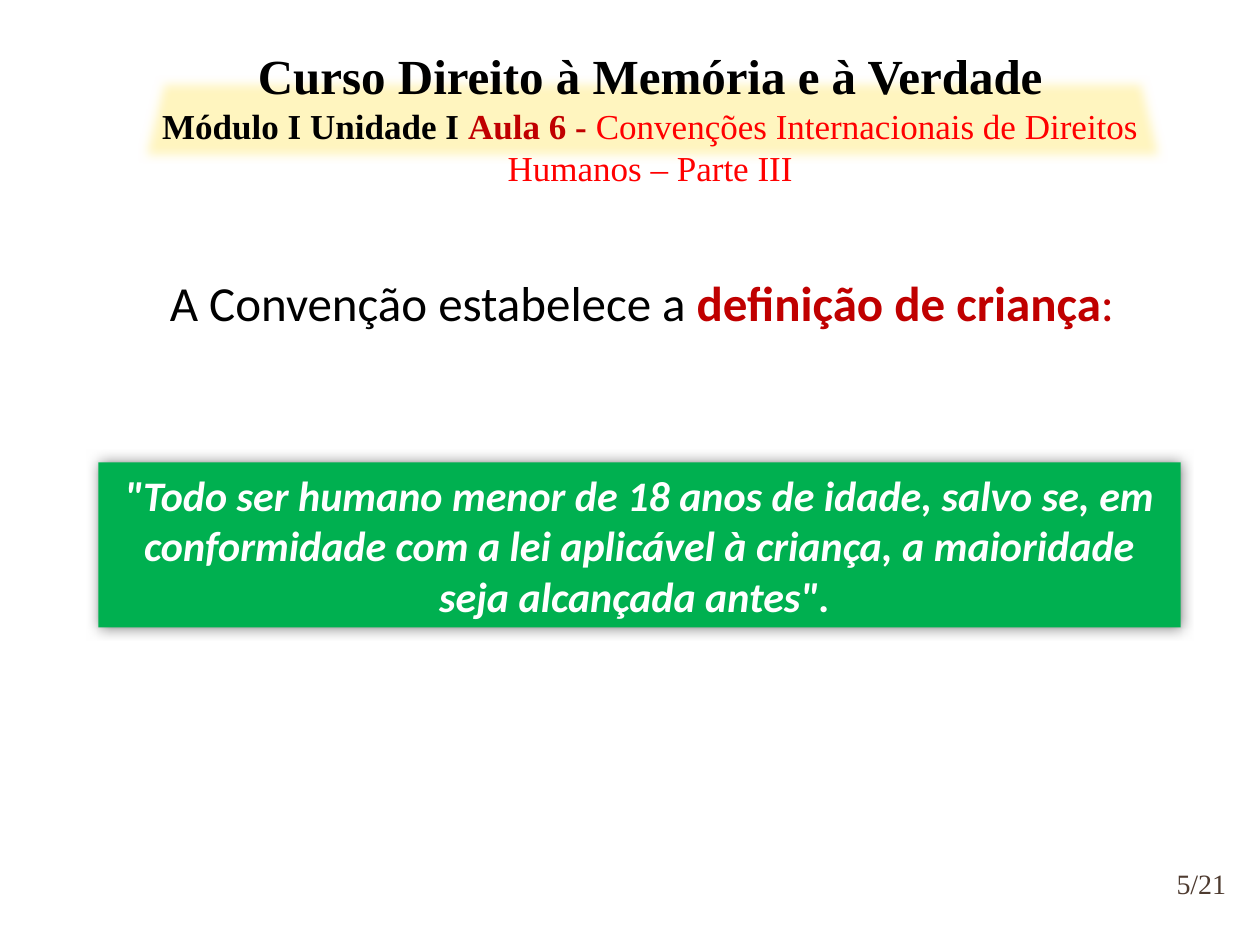
"""Build the course slide that defines a child under the Convention."""
from lxml import etree
from pptx import Presentation
from pptx import util as u
from pptx.dml.color import RGBColor
from pptx.enum import shapes, text
from pptx.oxml.ns import qn

WIDTH, HEIGHT = 10, 7.5
SERIF, SANS = "Times New Roman", "Calibri"
BLACK, DARK_RED, RED, WHITE = "000000", "C00000", "FF0000", "FFFFFF"
GREEN, CREAM, BROWN = "00B050", "FFF5BF", "4E3B30"

TITLE = [
    [("Curso Direito à Memória e à Verdade", dict(size=28, bold=True))],
    [("Módulo I Unidade I ", dict(size=20, bold=True)),
     ("Aula 6 - ", dict(size=20, bold=True, color=DARK_RED)),
     ("Convenções Internacionais de Direitos Humanos – Parte III",
      dict(size=20, color=RED))],
]
LEAD = [[("A Convenção estabelece a ", {}),
         ("definição de criança", dict(bold=True, color=DARK_RED)),
         (":", dict(color=DARK_RED))]]
QUOTE = [[('"Todo ser humano menor de 18 anos de idade, salvo se, em conformidade '
           'com a lei aplicável à criança, a maioridade seja alcançada antes". ',
           dict(bold=True, italic=True))]]
PAGE_NUMBER = [[("5/21", {})]]


def rgb(value):
    """Turn a hex string into a colour."""
    return RGBColor.from_string(value)


def inches(*lengths):
    """Convert lengths in inches."""
    return [u.Inches(length) for length in lengths]


def write(shape, paragraphs, font=SANS, size=28, color=BLACK, centered=True,
          middle=False, margin=None):
    """Write paragraphs of formatted spans into a shape."""
    frame = shape.text_frame
    frame.word_wrap = True
    frame.vertical_anchor = text.MSO_ANCHOR.MIDDLE if middle else text.MSO_ANCHOR.TOP
    if margin is not None:
        frame.margin_left = frame.margin_right = u.Inches(margin)
        frame.margin_top = frame.margin_bottom = u.Inches(margin)
    for index, spans in enumerate(paragraphs):
        para = frame.add_paragraph() if index else frame.paragraphs[0]
        para.alignment = text.PP_ALIGN.CENTER if centered else text.PP_ALIGN.LEFT
        for words, style in spans:
            span = para.add_run()
            span.text = words
            span.font.name = font
            span.font.size = u.Pt(style.get("size", size))
            span.font.bold = style.get("bold", False)
            span.font.italic = style.get("italic", False)
            span.font.color.rgb = rgb(style.get("color", color))


def add_panel(page, kind, place, fill):
    """Add a filled shape without outline or inherited shadow."""
    panel = page.shapes.add_shape(kind, *inches(*place))
    panel.shadow.inherit = False
    panel.fill.solid()
    panel.fill.fore_color.rgb = rgb(fill)
    panel.line.fill.background()
    return panel


def add_effect(shape, name, **attributes):
    """Add an effect to a shape and return its element."""
    effects = shape._element.spPr.find(qn("a:effectLst"))
    values = {key: str(value) for key, value in attributes.items()}
    return etree.SubElement(effects, qn(name), values)


def main():
    """Compose and save the slide."""
    deck = Presentation()
    deck.slide_width, deck.slide_height = inches(WIDTH, HEIGHT)
    page = deck.slides.add_slide(deck.slide_layouts[6])

    number = page.shapes.add_textbox(*inches(9.2, 6.76, 0.67, 0.5))
    write(number, PAGE_NUMBER, font=SERIF, size=16, color=BROWN, middle=True, margin=0)

    lead = page.shapes.add_textbox(*inches(1.25, 2.11, 7.87, 1.04))
    write(lead, LEAD, centered=False)

    quote = add_panel(page, shapes.MSO_SHAPE.RECTANGLE, (0.78, 3.67, 8.59, 1.31), GREEN)
    shadow = add_effect(quote, "a:outerShdw", blurRad=u.Pt(7.5), dist=0, algn="ctr")
    shade = etree.SubElement(shadow, qn("a:srgbClr"), val=BLACK)
    etree.SubElement(shade, qn("a:alpha"), val="50000")
    write(quote, QUOTE, size=24, color=WHITE, middle=True)

    band = add_panel(page, shapes.MSO_SHAPE.TRAPEZOID, (1.05, 0.6, 8.25, 0.7), CREAM)
    band.adjustments[0] = 0.25
    add_effect(band, "a:softEdge", rad=u.Pt(6))

    title = page.shapes.add_textbox(*inches(1.02, 0.31, 8.28, 1.25))
    write(title, TITLE, font=SERIF)

    deck.save("out.pptx")


if __name__ == "__main__":
    main()
